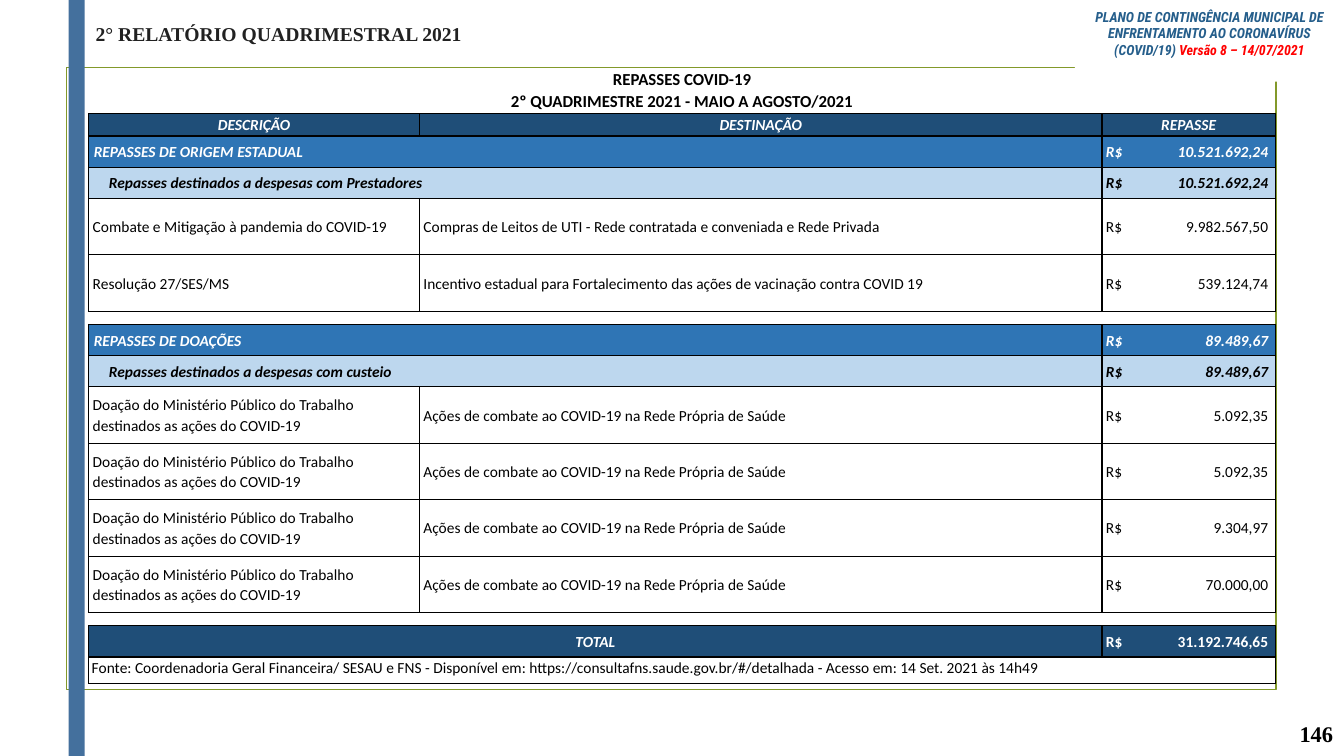
import lxml.etree
import pptx
import pptx.dml.color
import pptx.enum.shapes
import pptx.enum.text
import pptx.oxml.ns
import pptx.util

Inches = pptx.util.Inches
ALIGN = pptx.enum.text.PP_ALIGN
ANCHOR = pptx.enum.text.MSO_ANCHOR

# Content
HEADING = "2° RELATÓRIO QUADRIMESTRAL 2021"
PLAN = "PLANO DE CONTINGÊNCIA MUNICIPAL DE ENFRENTAMENTO AO CORONAVÍRUS (COVID/19) "
VERSION = "Versão 8 – 14/07/2021"
PAGE_NUMBER = "146"
DONATION = ("item", "Doação do Ministério Público do Trabalho destinados as ações do COVID-19",
            "Ações de combate ao COVID-19 na Rede Própria de Saúde")
ROWS = [
    ("title", "REPASSES COVID-19\n2º QUADRIMESTRE 2021 - MAIO A AGOSTO/2021", "", ""),
    ("header", "DESCRIÇÃO", "DESTINAÇÃO", "REPASSE"),
    ("section", "REPASSES DE ORIGEM ESTADUAL", "", "10.521.692,24"),
    ("subsection", "Repasses destinados a despesas com Prestadores", "", "10.521.692,24"),
    ("item", "Combate e Mitigação à pandemia do COVID-19",
     "Compras de Leitos de UTI - Rede contratada e conveniada e Rede Privada", "9.982.567,50"),
    ("item", "Resolução 27/SES/MS",
     "Incentivo estadual para Fortalecimento das ações de vacinação contra COVID 19", "539.124,74"),
    ("gap", "", "", ""),
    ("section", "REPASSES DE DOAÇÕES", "", "89.489,67"),
    ("subsection", "Repasses destinados a despesas com custeio", "", "89.489,67"),
    (*DONATION, "5.092,35"),
    (*DONATION, "5.092,35"),
    (*DONATION, "9.304,97"),
    (*DONATION, "70.000,00"),
    ("gap", "", "", ""),
    ("total", "TOTAL", "", "31.192.746,65"),
    ("source", "Fonte: Coordenadoria Geral Financeira/ SESAU e FNS - Disponível em: "
     "https://consultafns.saude.gov.br/#/detalhada - Acesso em: 14 Set. 2021 às 14h49", "", ""),
]

# Look
COLORS = {"green": "83992A", "bar": "44709D", "navy": "1F4E78", "blue": "2F75B5",
          "pale": "BDD7EE", "white": "FFFFFF", "black": "000000", "ink": "212121",
          "plan": "255E8B", "red": "FF0000"}
COLUMNS = [3.28, 6.77, 1.72]
STRONG = {"bold": True, "italic": True}
# kind: height, fill, columns merged, borders, cell inset, text format
KINDS = {
    "title": (0.47, None, 3, "B", 0.03, {"bold": True, "size": 12, "align": ALIGN.CENTER}),
    "header": (0.22, "navy", 1, "LRTB", 0.03, {**STRONG, "color": "white", "align": ALIGN.CENTER}),
    "section": (0.31, "blue", 2, "LRTB", 0.05, {**STRONG, "color": "white"}),
    "subsection": (0.31, "pale", 2, "LRTB", 0.05, {**STRONG, "indent": 0.15}),
    "item": (0.56, "white", 1, "LRTB", 0.04, {}),
    "gap": (0.13, "white", 1, "TB", 0.04, {}),
    "total": (0.31, "navy", 2, "LRTB", 0.05, {**STRONG, "color": "white", "align": ALIGN.CENTER}),
    "source": (0.26, "white", 3, "LRTB", 0.03, {}),
}


def rgb(name):
    return pptx.dml.color.RGBColor.from_string(COLORS[name])


def write(para, text, size=11, font="Calibri", color="black", bold=False, italic=False,
          align=ALIGN.LEFT, spacing=1.07, indent=0, tab=None):
    """Add a formatted run to a paragraph; tab is a right-aligned stop in inches."""
    para.alignment = align
    para.line_spacing = spacing
    props = para._p.get_or_add_pPr()
    if indent:
        props.set("marL", str(Inches(indent)))
    if tab:
        stops = lxml.etree.SubElement(props, pptx.oxml.ns.qn("a:tabLst"))
        lxml.etree.SubElement(stops, pptx.oxml.ns.qn("a:tab"), pos=str(Inches(tab)), algn="r")
    span = para.add_run()
    span.text = text
    span.font.name = font
    span.font.size = pptx.util.Pt(size)
    span.font.bold = bold
    span.font.italic = italic
    span.font.color.rgb = rgb(color)


def add_rect(left, top, width, height, fill=None, line=None):
    box = page.shapes.add_shape(pptx.enum.shapes.MSO_SHAPE.RECTANGLE, Inches(left),
                                Inches(top), Inches(width), Inches(height))
    box.shadow.inherit = False
    if fill:
        box.fill.solid()
        box.fill.fore_color.rgb = rgb(fill)
    else:
        box.fill.background()
    if line:
        box.line.color.rgb = rgb(line)
        box.line.width = pptx.util.Pt(1.25)
    else:
        box.line.fill.background()


def add_label(text, left, top, width, height, anchor=ANCHOR.TOP, wrap=True, **style):
    box = page.shapes.add_textbox(Inches(left), Inches(top), Inches(width), Inches(height))
    box.text_frame.word_wrap = wrap
    box.text_frame.vertical_anchor = anchor
    write(box.text_frame.paragraphs[0], text, font="Times New Roman", bold=True,
          spacing=1.0, **style)


def dress_cell(cell, fill, borders, inset):
    props = cell._tc.get_or_add_tcPr()
    for side in "LRTB":
        edge = lxml.etree.SubElement(props, pptx.oxml.ns.qn("a:ln" + side), w="12700")
        if side in borders:
            paint = lxml.etree.SubElement(edge, pptx.oxml.ns.qn("a:solidFill"))
            lxml.etree.SubElement(paint, pptx.oxml.ns.qn("a:srgbClr"), val=COLORS["black"])
        else:
            lxml.etree.SubElement(edge, pptx.oxml.ns.qn("a:noFill"))
    if fill:
        cell.fill.solid()
        cell.fill.fore_color.rgb = rgb(fill)
    else:
        cell.fill.background()
    cell.margin_left = cell.margin_right = Inches(inset)
    cell.margin_top = cell.margin_bottom = 0


deck = pptx.Presentation()
deck.slide_width, deck.slide_height = Inches(13.33), Inches(7.5)
page = deck.slides.add_slide(deck.slide_layouts[5])

# Frame, side bar, heading and page number
add_rect(0.66, 0.67, 12, 6.17, line="green")
add_rect(0.68, 0, 0.16, 7.5, fill="bar")
add_label(PAGE_NUMBER, 12.47, 7.08, 0.85, 0.4, anchor=ANCHOR.MIDDLE, size=16, align=ALIGN.RIGHT)
add_label(HEADING, 0.85, 0.17, 4, 0.34, wrap=False, size=14, color="ink")

# Transfers table
heights = [KINDS[row[0]][0] for row in ROWS]
table = page.shapes.add_table(len(ROWS), len(COLUMNS), Inches(0.88), Inches(0.66),
                              Inches(sum(COLUMNS)), Inches(sum(heights))).table
table.first_row = table.horz_banding = False
for column, width in zip(table.columns, COLUMNS):
    column.width = Inches(width)
for r, (kind, *texts) in enumerate(ROWS):
    height, fill, merged, borders, inset, style = KINDS[kind]
    table.rows[r].height = Inches(height)
    for c, text in enumerate(texts):
        cell = table.cell(r, c)
        dress_cell(cell, fill, borders, inset if c == 0 else 0.04)
        cell.vertical_anchor = ANCHOR.TOP if kind == "source" else ANCHOR.MIDDLE
        look = dict(style)
        if c == 2 and text and kind != "header":
            text = "R$\t" + text
            look.update(align=ALIGN.LEFT, indent=0, tab=1.61, italic=kind in ("section", "subsection"))
        if text:
            for i, line in enumerate(text.split("\n")):
                para = cell.text_frame.paragraphs[0] if i == 0 else cell.text_frame.add_paragraph()
                write(para, line, **look)
        else:
            lxml.etree.SubElement(cell.text_frame.paragraphs[0]._p,
                                  pptx.oxml.ns.qn("a:endParaRPr"), sz="400")
    if merged > 1:
        table.cell(r, 0).merge(table.cell(r, merged - 1))

# Plan title, in front of the frame's corner
title = page.shapes.title
title.left, title.top, title.width, title.height = map(Inches, (10.66, 0, 2.67, 0.81))
title.fill.solid()
title.fill.fore_color.rgb = rgb("white")
frame = title.text_frame
frame.word_wrap = True
frame.auto_size = pptx.enum.text.MSO_AUTO_SIZE.NONE
frame.vertical_anchor = ANCHOR.TOP
frame.margin_top = Inches(0.08)
for text, color in [(PLAN, "plan"), (VERSION, "red")]:
    write(frame.paragraphs[0], text, size=10, font="Roboto Condensed", color=color,
          align=ALIGN.CENTER, spacing=1.0, **STRONG)
page.shapes._spTree.append(title._element)

deck.save("out.pptx")
